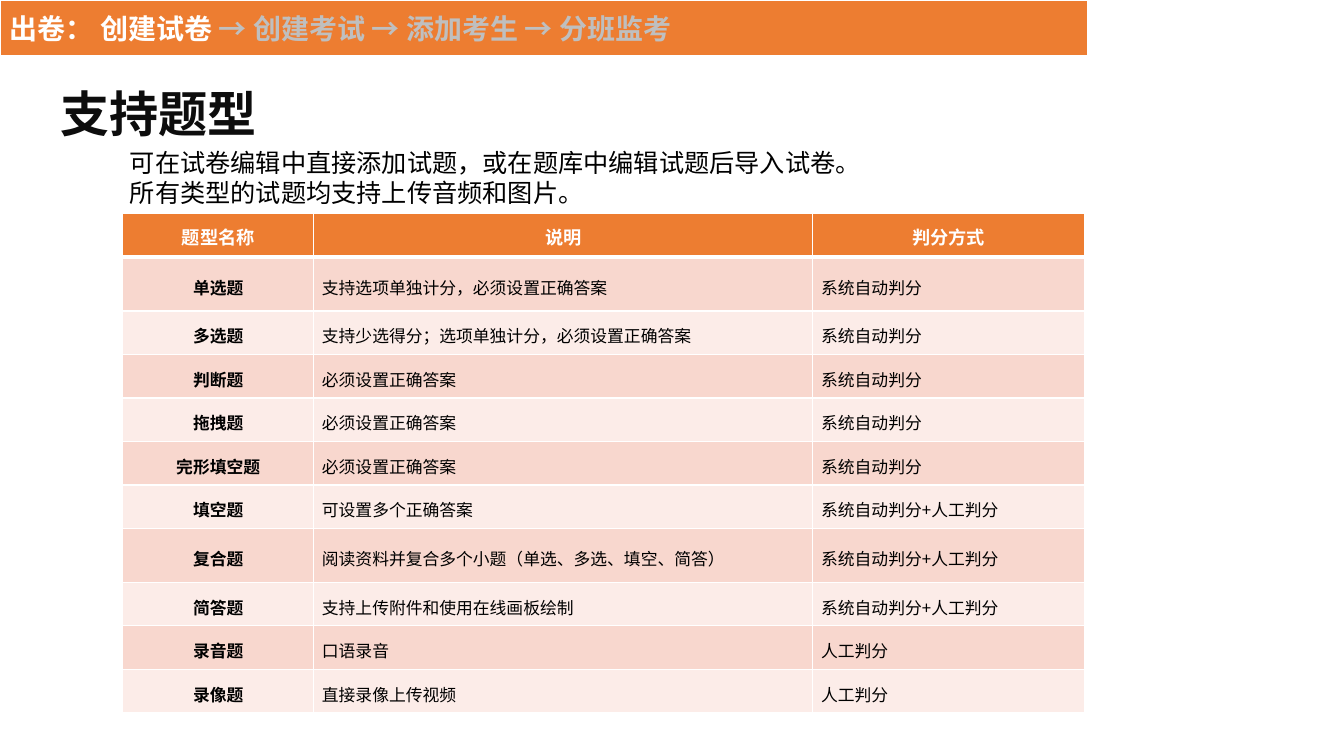
from lxml import etree
from pptx import Presentation
from pptx.dml.color import RGBColor
from pptx.enum.shapes import MSO_SHAPE
from pptx.enum.text import MSO_ANCHOR, PP_ALIGN
from pptx.oxml.ns import qn
from pptx.util import Pt

RECTANGLE = MSO_SHAPE.RECTANGLE
MIDDLE, TOP = MSO_ANCHOR.MIDDLE, MSO_ANCHOR.TOP
LEFT, CENTER = PP_ALIGN.LEFT, PP_ALIGN.CENTER
TITLE_ONLY = 5

# Content
TITLE = "支持题型"
CURRENT_STEP = "出卷： 创建试卷"
NEXT_STEPS = " → 创建考试 → 添加考生 → 分班监考"
INTRO = [
    "可在试卷编辑中直接添加试题，或在题库中编辑试题后导入试卷。",
    "所有类型的试题均支持上传音频和图片。",
]
AUTO, MANUAL = "系统自动判分", "人工判分"
BOTH = f"{AUTO}+{MANUAL}"
REQUIRED = "必须设置正确答案"
HEADINGS = ("题型名称", "说明", "判分方式")
QUESTION_TYPES = [
    ("单选题", f"支持选项单独计分，{REQUIRED}", AUTO),
    ("多选题", f"支持少选得分；选项单独计分，{REQUIRED}", AUTO),
    ("判断题", REQUIRED, AUTO),
    ("拖拽题", REQUIRED, AUTO),
    ("完形填空题", REQUIRED, AUTO),
    ("填空题", "可设置多个正确答案", BOTH),
    ("复合题", "阅读资料并复合多个小题（单选、多选、填空、简答）", BOTH),
    ("简答题", "支持上传附件和使用在线画板绘制", BOTH),
    ("录音题", "口语录音", MANUAL),
    ("录像题", "直接录像上传视频", MANUAL),
]

# Format
COLORS = {
    "orange": "ED7D31", "dark_band": "F8D7CE", "light_band": "FCECE8",
    "white": "FFFFFF", "black": "000000", "title": "0D0D0D", "grey": "BFBFBF",
}
CJK = "Noto Sans CJK SC"
TITLE_FONT = {"name": "Arial", "size": Pt(35.1), "bold": True}
BANNER_FONT = {"name": CJK, "size": Pt(20), "bold": True}
INTRO_FONT = {"name": CJK, "size": Pt(18), "bold": False}
HEADING_FONT = {"name": CJK, "size": Pt(13), "bold": True}
CELL_FONT = {"name": CJK, "size": Pt(12), "bold": False}
NAME_FONT = {**CELL_FONT, "bold": True}

COLUMN_WIDTHS = (136.2, 356.6, 194.2)
ROW_HEIGHT, TALL_ROW_HEIGHT = 31.1, 38.3
TALL_ROWS = (1, 7)


def rgb(color):
    return RGBColor.from_string(COLORS[color])


def set_values(target, values):
    for key, value in values.items():
        setattr(target, key, value)


def add_run(paragraph, text, font, color):
    run = paragraph.add_run()
    run.text = text
    set_values(run.font, font)
    run.font.color.rgb = rgb(color)
    east_asian = etree.SubElement(run.font._element, qn("a:ea"))
    east_asian.set("typeface", CJK)


def add_border(cell, side, width):
    line = etree.SubElement(cell._tc.get_or_add_tcPr(), qn(f"a:{side}"), w=str(Pt(width)))
    fill = etree.SubElement(line, qn("a:solidFill"))
    etree.SubElement(fill, qn("a:srgbClr"), val=COLORS["white"])


def fill_cell(cell, text, font, color, band, align, top_margin, edges):
    set_values(cell, {
        "vertical_anchor": MIDDLE,
        "margin_left": Pt(6), "margin_right": Pt(6),
        "margin_top": Pt(top_margin), "margin_bottom": Pt(3),
    })
    for side, width in zip(("lnL", "lnR", "lnT", "lnB"), edges):
        add_border(cell, side, width)
    cell.fill.solid()
    cell.fill.fore_color.rgb = rgb(band)
    paragraph = cell.text_frame.paragraphs[0]
    paragraph.alignment = align
    add_run(paragraph, text, font, color)


presentation = Presentation()
set_values(presentation, {"slide_width": Pt(960), "slide_height": Pt(540)})
slide = presentation.slides.add_slide(presentation.slide_layouts[TITLE_ONLY])

# Title
title = slide.shapes.title
set_values(title, {"left": Pt(36), "top": Pt(54.7), "width": Pt(436.3), "height": Pt(51.8)})
set_values(title.text_frame, {"vertical_anchor": MIDDLE, "word_wrap": True})
title_line = title.text_frame.paragraphs[0]
title_line.alignment = LEFT
add_run(title_line, TITLE, TITLE_FONT, "title")

# Table of question types
row_count = len(QUESTION_TYPES) + 1
heights = [TALL_ROW_HEIGHT if row in TALL_ROWS else ROW_HEIGHT for row in range(row_count)]
table = slide.shapes.add_table(
    row_count, len(HEADINGS), Pt(87.8), Pt(152.7), Pt(sum(COLUMN_WIDTHS)), Pt(sum(heights))
).table
for column, width in zip(table.columns, COLUMN_WIDTHS):
    column.width = Pt(width)
for row, height in zip(table.rows, heights):
    row.height = Pt(height)

for column, heading in enumerate(HEADINGS):
    fill_cell(table.cell(0, column), heading, HEADING_FONT, "white", "orange", CENTER, 5, (1, 1, 1, 3))
for row, question_type in enumerate(QUESTION_TYPES, start=1):
    band = "dark_band" if row % 2 else "light_band"
    edges = (1, 1, 3 if row == 1 else 1, 1)
    for column, text in enumerate(question_type):
        font, align = (CELL_FONT, LEFT) if column else (NAME_FONT, CENTER)
        fill_cell(table.cell(row, column), text, font, "black", band, align, 7, edges)

# Introduction
intro = slide.shapes.add_textbox(Pt(85.7), Pt(101.5), Pt(627), Pt(51)).text_frame
set_values(intro, {"word_wrap": True, "vertical_anchor": TOP})
for index, sentence in enumerate(INTRO):
    paragraph = intro.add_paragraph() if index else intro.paragraphs[0]
    add_run(paragraph, sentence, INTRO_FONT, "black")

# Step banner
banner = slide.shapes.add_shape(RECTANGLE, 0, 0, Pt(777.6), Pt(40.3))
banner.shadow.inherit = False
banner.fill.solid()
banner.fill.fore_color.rgb = rgb("orange")
banner.line.color.rgb = rgb("white")
banner.line.width = Pt(1.5)
banner.text_frame.vertical_anchor = MIDDLE
steps = banner.text_frame.paragraphs[0]
steps.alignment = LEFT
add_run(steps, CURRENT_STEP, BANNER_FONT, "white")
add_run(steps, NEXT_STEPS, BANNER_FONT, "grey")

presentation.save("out.pptx")
